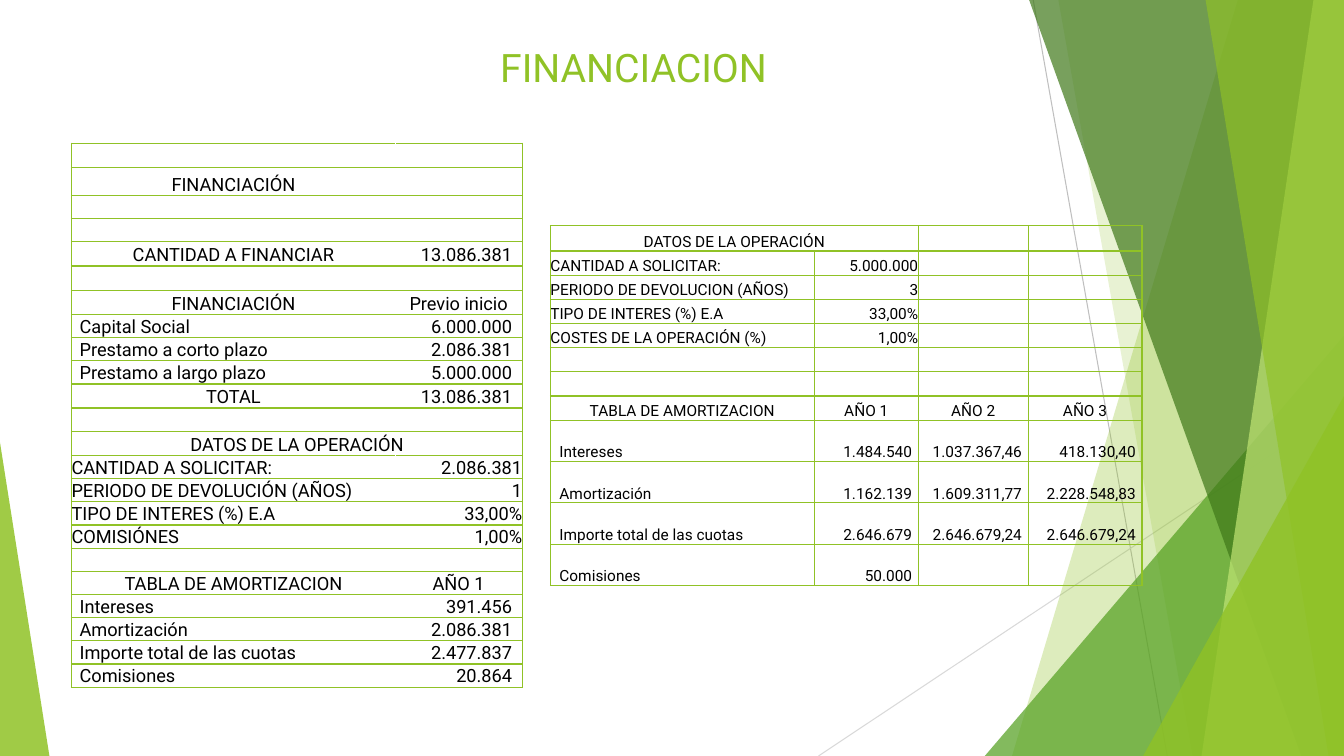
"""Build the FINANCIACION slide with its two financing tables."""
from dataclasses import dataclass
from enum import Enum
from itertools import product
from typing import Any

from lxml.etree import SubElement
from pptx import Presentation
from pptx.dml.color import RGBColor
from pptx.enum.shapes import MSO_CONNECTOR, MSO_SHAPE
from pptx.enum.text import MSO_ANCHOR, PP_ALIGN
from pptx.oxml.ns import qn
from pptx.util import Inches, Pt

SLIDE_HEIGHT = Inches(7.5)
GRID_ROWS = 75
GRID_COLUMNS = 133.33


@dataclass(frozen=True)
class Theme:
    font: str = "Roboto"
    lime: str = "90C226"
    leaf: str = "54A021"
    forest: str = "3F7819"
    pale: str = "C0E474"
    grey: str = "BFBFBF"
    light_grey: str = "D9D9D9"
    white: str = "FFFFFF"
    black: str = "000000"
    title_size: float = 28
    left_size: float = 13
    right_size: float = 11
    border_width: float = 1
    ray_width: float = 0.75


THEME = Theme()


class Kind(Enum):
    """Alignment of the first cell and of the other cells, and whether both are inset."""
    HEADING = (PP_ALIGN.CENTER, PP_ALIGN.CENTER, False, False)
    TOTAL = (PP_ALIGN.CENTER, PP_ALIGN.RIGHT, False, True)
    DATUM = (PP_ALIGN.LEFT, PP_ALIGN.RIGHT, False, False)
    ENTRY = (PP_ALIGN.LEFT, PP_ALIGN.RIGHT, True, True)


@dataclass(frozen=True)
class Row:
    texts: tuple[str, ...] = ()
    kind: Kind = Kind.HEADING
    height: float = 2.3
    merged: bool = False


@dataclass(frozen=True)
class TableSpec:
    left: float
    top: float
    columns: tuple[float, ...]
    rows: tuple[Row, ...]
    size: float
    label_inset: float
    number_inset: float
    fill: str | None = None
    inner_verticals: bool = True


@dataclass(frozen=True)
class Ray:
    start: tuple[float, float]
    end: tuple[float, float]
    colour: str


@dataclass(frozen=True)
class Facet:
    points: tuple[tuple[float, float], ...]
    colour: str
    opacity: int


@dataclass(frozen=True)
class Triangle:
    box: tuple[float, float, float, float]
    apex: float
    colour: str
    opacity: int


RIGHT, BOTTOM = GRID_COLUMNS, GRID_ROWS
DECORATION = (
    Ray((102.5, 0), (115.8, BOTTOM), THEME.grey),
    Ray((RIGHT, 40.3), (81.2, BOTTOM), THEME.light_grey),
    Facet(((122.8, 0), (RIGHT, 0), (RIGHT, BOTTOM), (100.4, BOTTOM)), THEME.lime, 30),
    Facet(((105, 0), (RIGHT, 0), (RIGHT, BOTTOM), (118.3, BOTTOM)), THEME.lime, 20),
    Triangle((97.7, 33.3, 35.63, 41.7), 1, THEME.leaf, 72),
    Facet(((102.1, 0), (RIGHT, 0), (RIGHT, BOTTOM), (129.1, BOTTOM)), THEME.forest, 70),
    Facet(((130.3, 0), (RIGHT, 0), (RIGHT, BOTTOM), (119.2, BOTTOM)), THEME.pale, 70),
    Facet(((119.6, 0), (RIGHT, 0), (RIGHT, BOTTOM), (131.8, BOTTOM)), THEME.lime, 65),
    Triangle((113.4, 39.3, 19.93, 35.7), 1, THEME.lime, 80),
    Triangle((0, 43.9, 4.9, 31.1), 0, THEME.lime, 85),
)

SHORT_TERM = TableSpec(7.1, 14.2, (32.1, 12.6), (
    Row(height=2.4),
    Row(("FINANCIACIÓN",), height=2.8),
    Row(),
    Row(),
    Row(("CANTIDAD A FINANCIAR", "13.086.381"), Kind.TOTAL, 2.4),
    Row(height=2.4),
    Row(("FINANCIACIÓN", "Previo inicio"), height=2.4),
    Row(("Capital Social", "6.000.000"), Kind.ENTRY),
    Row(("Prestamo a corto plazo", "2.086.381"), Kind.ENTRY),
    Row(("Prestamo a largo plazo", "5.000.000"), Kind.ENTRY),
    Row(("TOTAL", "13.086.381"), Kind.TOTAL, 2.4),
    Row(),
    Row(("DATOS DE LA OPERACIÓN",), height=2.4, merged=True),
    Row(("CANTIDAD A SOLICITAR:", "2.086.381"), Kind.DATUM),
    Row(("PERIODO DE DEVOLUCIÓN (AÑOS)", "1"), Kind.DATUM),
    Row(("TIPO DE INTERES (%) E.A", "33,00%"), Kind.DATUM),
    Row(("COMISIÓNES", "1,00%"), Kind.DATUM),
    Row(),
    Row(("TABLA DE AMORTIZACION", "AÑO 1")),
    Row(("Intereses", "391.456"), Kind.ENTRY),
    Row(("Amortización", "2.086.381"), Kind.ENTRY),
    Row(("Importe total de las cuotas", "2.477.837"), Kind.ENTRY),
    Row(("Comisiones", "20.864"), Kind.ENTRY),
), THEME.left_size, 0.8, 1, THEME.white, False)

LONG_TERM = TableSpec(54.6, 22.4, (26.2, 10.3, 10.9, 11.3), (
    Row(("DATOS DE LA OPERACIÓN",), height=2.5, merged=True),
    Row(("CANTIDAD A SOLICITAR:", "5.000.000"), Kind.DATUM, 2.4),
    Row(("PERIODO DE DEVOLUCION (AÑOS)", "3"), Kind.DATUM, 2.4),
    Row(("TIPO DE INTERES (%) E.A", "33,00%"), Kind.DATUM, 2.4),
    Row(("COSTES DE LA OPERACIÓN (%)", "1,00%"), Kind.DATUM, 2.4),
    Row(height=2.4),
    Row(height=2.4),
    Row(("TABLA DE AMORTIZACION", "AÑO 1", "AÑO 2", "AÑO 3"), height=2.4),
    Row(("Intereses", "1.484.540", "1.037.367,46", "418.130,40"), Kind.ENTRY, 4.1),
    Row(("Amortización", "1.162.139", "1.609.311,77", "2.228.548,83"), Kind.ENTRY, 4.1),
    Row(("Importe total de las cuotas", "2.646.679", "2.646.679,24", "2.646.679,24"), Kind.ENTRY, 4.1),
    Row(("Comisiones", "50.000"), Kind.ENTRY, 4.1),
), THEME.right_size, 0.9, 0.6)


def grid(steps: float) -> int:
    """Return the length of a number of square grid steps."""
    return round(SLIDE_HEIGHT * steps / GRID_ROWS)


def set_format(target: Any, values: dict[str, Any]) -> None:
    """Set every attribute listed in values."""
    for name, value in values.items():
        setattr(target, name, value)


def format_text(paragraph: Any, size: float, colour: str, alignment: PP_ALIGN) -> None:
    """Format a paragraph and its runs, or its end mark when it is empty."""
    paragraph.alignment = alignment
    for run in paragraph.runs:
        set_format(run.font, {"size": Pt(size), "name": THEME.font})
        run.font.color.rgb = RGBColor.from_string(colour)
    if not paragraph.runs:
        SubElement(paragraph._p, qn("a:endParaRPr"), sz=str(round(size * 100)))


def draw_decoration(slide: Any, item: Ray | Facet | Triangle) -> None:
    """Draw one thin ray or translucent facet."""
    shapes = slide.shapes
    if isinstance(item, Ray):
        ends = [grid(value) for value in item.start + item.end]
        connector = shapes.add_connector(MSO_CONNECTOR.STRAIGHT, *ends)
        connector.line.width = Pt(THEME.ray_width)
        connector.line.color.rgb = RGBColor.from_string(item.colour)
        SubElement(connector._element.spPr, qn("a:effectLst"))
        return
    if isinstance(item, Triangle):
        shape = shapes.add_shape(MSO_SHAPE.ISOSCELES_TRIANGLE, *map(grid, item.box))
        shape.adjustments[0] = item.apex
    else:
        points = [(grid(x), grid(y)) for x, y in item.points]
        builder = shapes.build_freeform(*points[0])
        builder.add_line_segments(points[1:], close=True)
        shape = builder.convert_to_shape()
    shape.shadow.inherit = False
    shape.line.fill.background()
    shape.fill.solid()
    shape.fill.fore_color.rgb = RGBColor.from_string(item.colour)
    colour = shape._element.spPr.find(qn("a:solidFill"))[0]
    SubElement(colour, qn("a:alpha"), val=str(item.opacity * 1000))


def draw_borders(cell: Any, sides: str) -> None:
    """Give a cell a lime border on the named sides."""
    properties = cell._tc.get_or_add_tcPr()
    for side in sides:
        line = SubElement(properties, qn(f"a:ln{side}"), w=str(Pt(THEME.border_width)))
        fill = SubElement(line, qn("a:solidFill"))
        SubElement(fill, qn("a:srgbClr"), val=THEME.lime)


def draw_table(slide: Any, spec: TableSpec) -> None:
    """Draw a table from its specification."""
    heights = [row.height for row in spec.rows]
    box = map(grid, (spec.left, spec.top, sum(spec.columns), sum(heights)))
    table = slide.shapes.add_table(len(heights), len(spec.columns), *box).table
    set_format(table, {"first_row": False, "horz_banding": False})
    for column, width in zip(table.columns, spec.columns):
        column.width = grid(width)
    for table_row, height in zip(table.rows, heights):
        table_row.height = grid(height)
    for (row_index, row), column_index in product(enumerate(spec.rows), range(len(spec.columns))):
        cell = table.cell(row_index, column_index)
        is_label = column_index == 0
        label_side, number_side, label_inset, number_inset = row.kind.value
        set_format(cell, {
            "text": row.texts[column_index] if column_index < len(row.texts) else "",
            "vertical_anchor": MSO_ANCHOR.BOTTOM,
            "margin_top": 0,
            "margin_bottom": 0,
            "margin_left": grid(spec.label_inset) if is_label and label_inset else 0,
            "margin_right": grid(spec.number_inset) if not is_label and number_inset else 0,
        })
        format_text(cell.text_frame.paragraphs[0], spec.size, THEME.black,
                    label_side if is_label else number_side)
        all_sides = spec.inner_verticals or row.merged
        draw_borders(cell, "LRTB" if all_sides else "LTB" if is_label else "RTB")
        if spec.fill:
            cell.fill.solid()
            cell.fill.fore_color.rgb = RGBColor.from_string(spec.fill)
        else:
            cell.fill.background()
        if row.merged and column_index == 1:
            table.cell(row_index, 0).merge(cell)


def main() -> None:
    """Build and save the presentation."""
    presentation = Presentation()
    set_format(presentation, {"slide_width": grid(GRID_COLUMNS), "slide_height": SLIDE_HEIGHT})
    slide = presentation.slides.add_slide(presentation.slide_layouts[5])
    for item in DECORATION:
        draw_decoration(slide, item)
    title = slide.shapes.title
    set_format(title, {"left": grid(38.5), "top": grid(3.8), "width": grid(48.7), "height": grid(5.7)})
    set_format(title.text_frame, {"text": "FINANCIACION", "vertical_anchor": MSO_ANCHOR.MIDDLE})
    format_text(title.text_frame.paragraphs[0], THEME.title_size, THEME.lime, PP_ALIGN.CENTER)
    for spec in (SHORT_TERM, LONG_TERM):
        draw_table(slide, spec)
    presentation.save("out.pptx")


if __name__ == "__main__":
    main()
